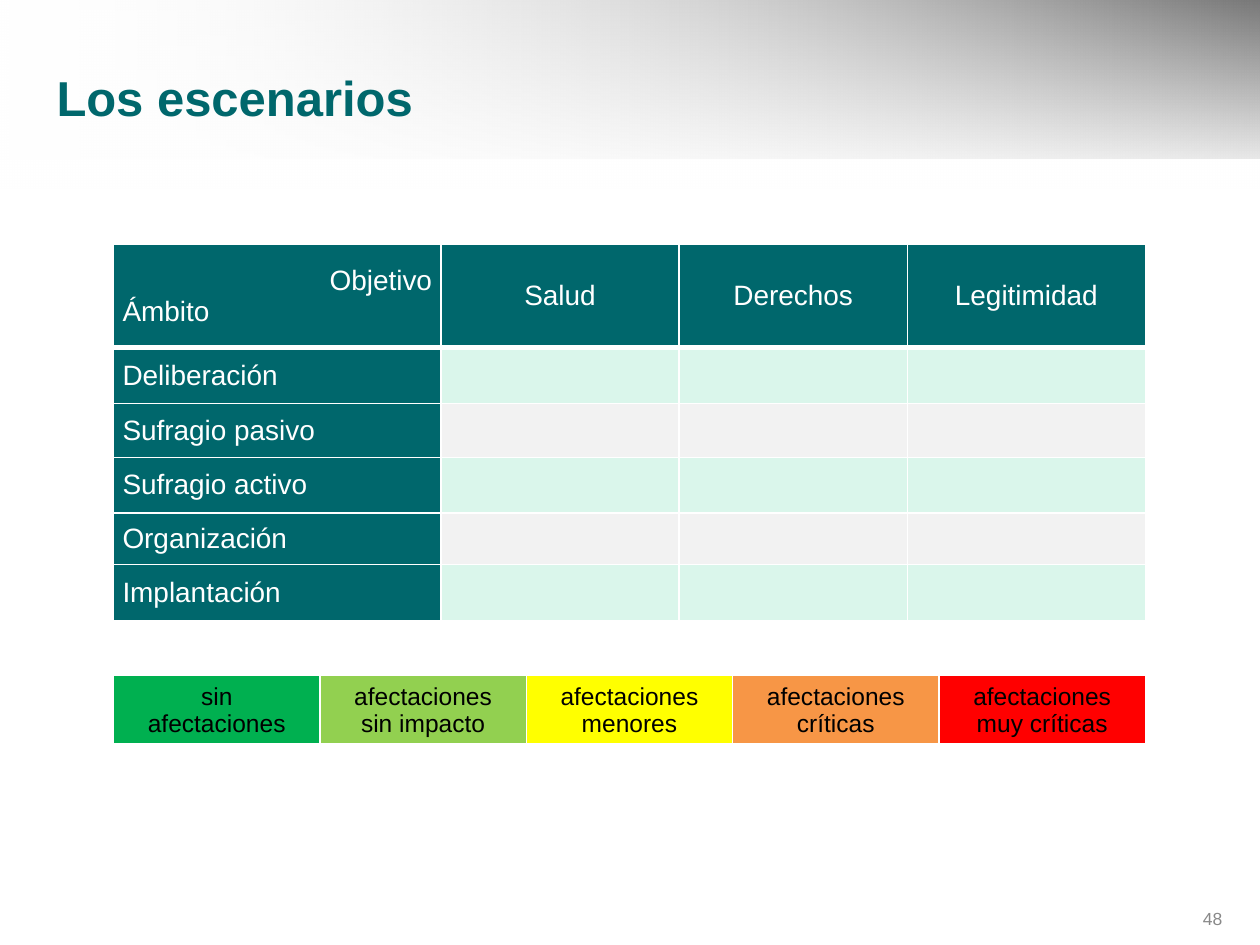
"""Build the scenarios slide: a table of areas by goals and a severity legend."""
from lxml.etree import SubElement
from pptx import Presentation
from pptx.dml.color import RGBColor
from pptx.enum.shapes import MSO_SHAPE as Shape
from pptx.enum.text import MSO_ANCHOR as Anchor, PP_ALIGN as Align
from pptx.oxml.ns import qn
from pptx.util import Cm, Pt

COLORS = {
    "teal": "00676C", "white": "FFFFFF", "black": "000000", "number": "898989",
    "mint": "DAF6EB", "gray": "F2F2F2", "green": "00B050", "lime": "92D050",
    "yellow": "FFFF00", "orange": "F79646", "red": "FF0000",
}


def write(frame, lines, size, color, bold=False):
    frame.word_wrap = True
    for index, (text, align) in enumerate(lines):
        para = frame.add_paragraph() if index else frame.paragraphs[0]
        para.text = text
        para.alignment = align
        para.font.name = "Arial"
        para.font.size = Pt(size)
        para.font.bold = bold
        para.font.color.rgb = RGBColor.from_string(COLORS[color])


def style_cell(cell, lines, size, color, fill, bottom):
    write(cell.text_frame, lines, size, color)
    cell.vertical_anchor = Anchor.MIDDLE
    cell.margin_left = cell.margin_right = Cm(0.18)
    cell.margin_top = cell.margin_bottom = 0
    properties = cell._tc.get_or_add_tcPr()
    for side, width in (("L", 1), ("R", 1), ("T", 1), ("B", bottom)):
        line = SubElement(properties, qn(f"a:ln{side}"), w=str(Pt(width)))
        solid = SubElement(line, qn("a:solidFill"))
        SubElement(solid, qn("a:srgbClr"), val=COLORS["white"])
    cell.fill.solid()
    cell.fill.fore_color.rgb = RGBColor.from_string(COLORS[fill])


deck = Presentation()
deck.slide_width, deck.slide_height = Cm(25.4), Cm(19.05)
page = deck.slides.add_slide(deck.slide_layouts[6])

bands = [
    (3.2, 0, ("white", "black"), (0, 100)),
    (3.81, 270, ("white", "white"), (47, 100)),
]
for height, angle, colors, opacities in bands:
    band = page.shapes.add_shape(Shape.RECTANGLE, 0, 0, deck.slide_width, Cm(height))
    band.shadow.inherit = False
    band.line.fill.background()
    band.fill.gradient()
    band.fill.gradient_angle = angle
    for stop, color in zip(band.fill.gradient_stops, colors):
        stop.color.rgb = RGBColor.from_string(COLORS[color])
    for tint, opacity in zip(band._element.spPr.iter(qn("a:srgbClr")), opacities):
        SubElement(tint, qn("a:alpha"), val=str(opacity * 1000))

labels = [
    ("Los escenarios", 0.89, 1.17, 23.39, 1.57, Align.LEFT, 28, "teal", True),
    ("48", 23.29, 18.14, 1.6, 0.74, Align.RIGHT, 10, "number", False),
]
for text, left, top, width, height, align, size, color, bold in labels:
    box = page.shapes.add_textbox(Cm(left), Cm(top), Cm(width), Cm(height))
    box.text_frame.vertical_anchor = Anchor.MIDDLE
    write(box.text_frame, [(text, align)], size, color, bold)

goals = ["Salud", "Derechos", "Legitimidad"]
areas = ["Deliberación", "Sufragio pasivo", "Sufragio activo", "Organización", "Implantación"]
header = [[("Objetivo", Align.RIGHT), ("Ámbito", Align.JUSTIFY)]]
header += [[(goal, Align.CENTER)] for goal in goals]
scenario_rows = [[(lines, "teal") for lines in header]]
for index, area in enumerate(areas):
    stripe = "gray" if index % 2 else "mint"
    blanks = [([("", Align.CENTER)], stripe)] * len(goals)
    scenario_rows.append([([(area, Align.JUSTIFY)], "teal")] + blanks)

levels = [
    (["sin", "afectaciones"], "green"),
    (["afectaciones", "sin impacto"], "lime"),
    (["afectaciones menores"], "yellow"),
    (["afectaciones críticas"], "orange"),
    (["afectaciones muy críticas"], "red"),
]
legend_row = [([(text, Align.CENTER) for text in texts], fill) for texts, fill in levels]

tables = [
    (4.93, [6.6, 4.8, 4.6, 4.8], [2.08, 1.12, 1.09, 1.12, 1.04, 1.14], scenario_rows, 16, "white"),
    (13.61, [4.16] * len(levels), [1.42], [legend_row], 14, "black"),
]
for top, widths, heights, rows, size, color in tables:
    table = page.shapes.add_table(
        len(heights), len(widths), Cm(2.29), Cm(top), Cm(sum(widths)), Cm(sum(heights))
    ).table
    table.first_row = table.horz_banding = False
    for column, width in zip(table.columns, widths):
        column.width = Cm(width)
    for row_index, (height, row) in enumerate(zip(heights, rows)):
        table.rows[row_index].height = Cm(height)
        bottom = 1 if row_index else 3
        for column_index, (lines, fill) in enumerate(row):
            style_cell(table.cell(row_index, column_index), lines, size, color, fill, bottom)

deck.save("out.pptx")
